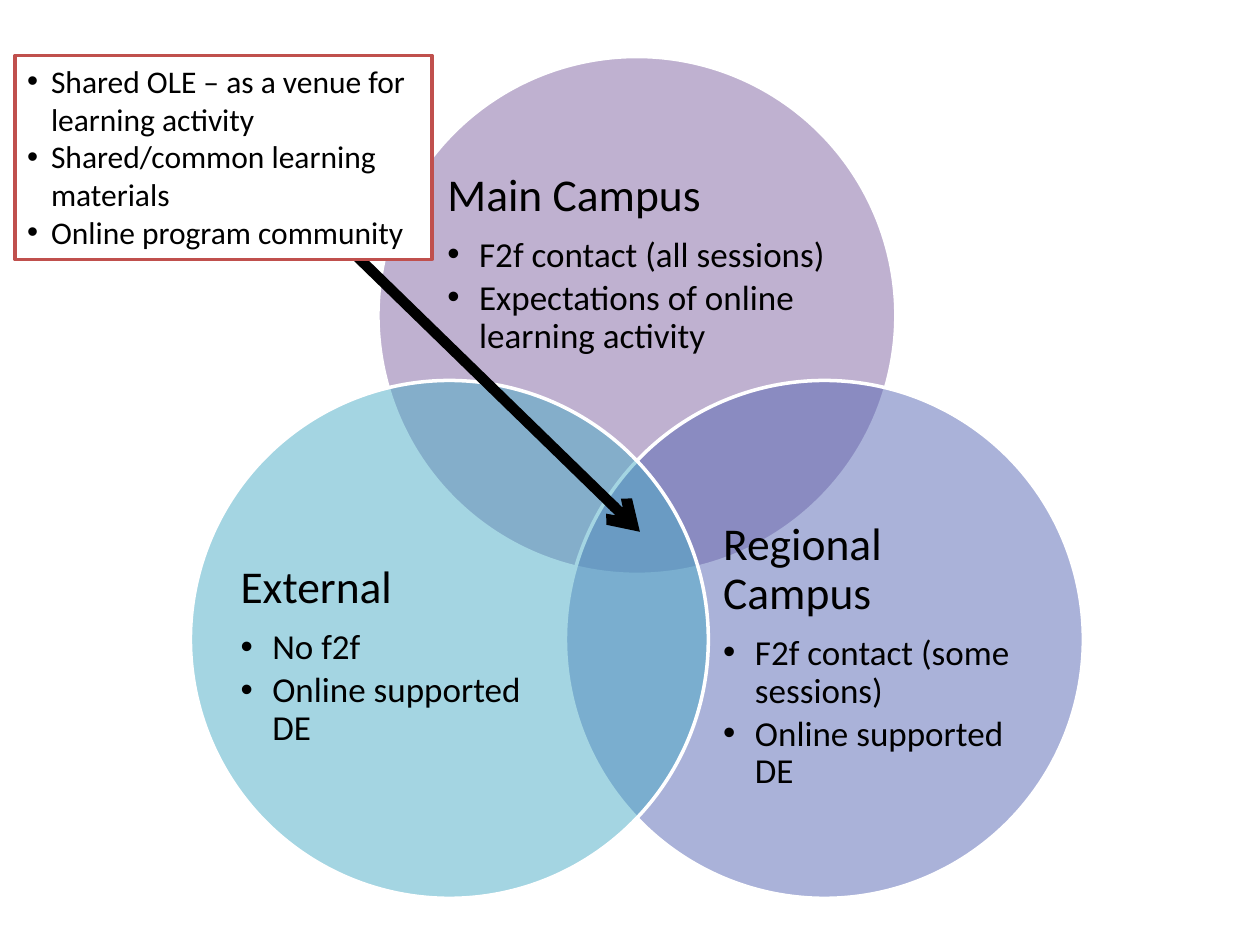
import pptx
import pptx.util
import pptx.dml.color
import pptx.enum.shapes
import pptx.enum.text
import pptx.oxml.ns
import lxml.etree

Cm = pptx.util.Cm
Pt = pptx.util.Pt
SHAPE = pptx.enum.shapes.MSO_SHAPE

CENTRE_X, TOP_Y, SIDE_STEP, DROP, DIAMETER = 12.84, 6.36, 3.78, 6.53, 10.44
GROUPS = [
    {"name": "Main Campus", "offset": (0, 0), "color": "8064A2",
     "area": (9.02, 2.97, 7.65, 4.7),
     "points": ["F2f contact (all sessions)", "Expectations of online learning activity"]},
    {"name": "Regional Campus", "offset": (1, 1), "color": "5767B4",
     "area": (14.58, 10.36, 6.27, 5.74),
     "points": ["F2f contact (some sessions)", "Online supported DE"]},
    {"name": "External", "offset": (-1, 1), "color": "4BACC6",
     "area": (4.85, 10.36, 6.27, 5.74),
     "points": ["No f2f", "Online supported DE"]},
]
SHARED_AREA = (0.3, 1.12, 8.41, 4.11)
SHARED = [
    ("Shared OLE – as a venue for ", "learning activity"),
    ("Shared/common learning ", "materials"),
    ("Online program community",),
]
ARROW = (5.51, 3.53, 12.9, 10.72)
NAME_FORMAT = {"line_spacing": 0.9, "space_after": Pt(9)}
POINT_FORMAT = {"line_spacing": 0.9, "space_after": Pt(3)}


def rgb(value):
    return pptx.dml.color.RGBColor.from_string(value)


def apply(target, values):
    for key, value in values.items():
        setattr(target, key, value)


def add_xml(parent, tag, **attributes):
    return lxml.etree.SubElement(parent, pptx.oxml.ns.qn(tag), **attributes)


def place(area):
    return [Cm(value) for value in area]


def add_filled(slide, kind, area, fill, line):
    shape = slide.shapes.add_shape(kind, *place(area))
    shape.shadow.inherit = False
    shape.fill.solid()
    shape.fill.fore_color.rgb = rgb(fill)
    shape.line.color.rgb = rgb(line)
    shape.line.width = Pt(2)
    return shape


def write(frame, items):
    for index, (lines, size, indent, values) in enumerate(items):
        para = frame.paragraphs[0] if index == 0 else frame.add_paragraph()
        apply(para, {"alignment": pptx.enum.text.PP_ALIGN.LEFT, **values})
        for number, line in enumerate(lines):
            if number:
                para.add_line_break()
            span = para.add_run()
            span.text = line
            apply(span.font, {"size": Pt(size), "name": "Calibri"})
            span.font.color.rgb = rgb("000000")
        if indent:
            properties = para._p.get_or_add_pPr()
            properties.set("marL", str(Cm(indent)))
            properties.set("indent", str(-Cm(indent)))
            add_xml(properties, "a:buFont", typeface="Arial")
            add_xml(properties, "a:buChar", char="•")


def add_group(slide, group):
    across, down = group["offset"]
    left = CENTRE_X + across * SIDE_STEP - DIAMETER / 2
    top = TOP_Y + down * DROP - DIAMETER / 2
    circle = add_filled(slide, SHAPE.OVAL, (left, top, DIAMETER, DIAMETER), group["color"], "FFFFFF")
    fill_color = circle._element.spPr.find(pptx.oxml.ns.qn("a:solidFill"))[0]
    add_xml(fill_color, "a:alpha", val="50000")
    frame = slide.shapes.add_textbox(*place(group["area"])).text_frame
    apply(frame, {"word_wrap": True, "vertical_anchor": pptx.enum.text.MSO_ANCHOR.MIDDLE,
                  "margin_left": 0, "margin_right": 0, "margin_top": 0, "margin_bottom": 0})
    points = [((point,), 20, 0.64, POINT_FORMAT) for point in group["points"]]
    write(frame, [((group["name"],), 26, 0, NAME_FORMAT)] + points)


def add_arrow(slide):
    arrow = slide.shapes.add_connector(pptx.enum.shapes.MSO_CONNECTOR.STRAIGHT, *place(ARROW))
    arrow.line.color.rgb = rgb("000000")
    arrow.line.width = Pt(6)
    add_xml(arrow.line._get_or_add_ln(), "a:tailEnd", type="arrow")
    add_xml(arrow._element.spPr, "a:effectLst")


def add_shared(slide):
    box = add_filled(slide, SHAPE.RECTANGLE, SHARED_AREA, "FFFFFF", "C0504D")
    apply(box.text_frame, {"word_wrap": True, "vertical_anchor": pptx.enum.text.MSO_ANCHOR.TOP,
                           "auto_size": pptx.enum.text.MSO_AUTO_SIZE.SHAPE_TO_FIT_TEXT})
    write(box.text_frame, [(lines, 18, 0.48, {}) for lines in SHARED])


def main():
    deck = pptx.Presentation()
    apply(deck, {"slide_width": Cm(25.4), "slide_height": Cm(19.05)})
    slide = deck.slides.add_slide(deck.slide_layouts[6])
    for group in GROUPS:
        add_group(slide, group)
    add_arrow(slide)
    add_shared(slide)
    deck.save("out.pptx")


if __name__ == "__main__":
    main()
